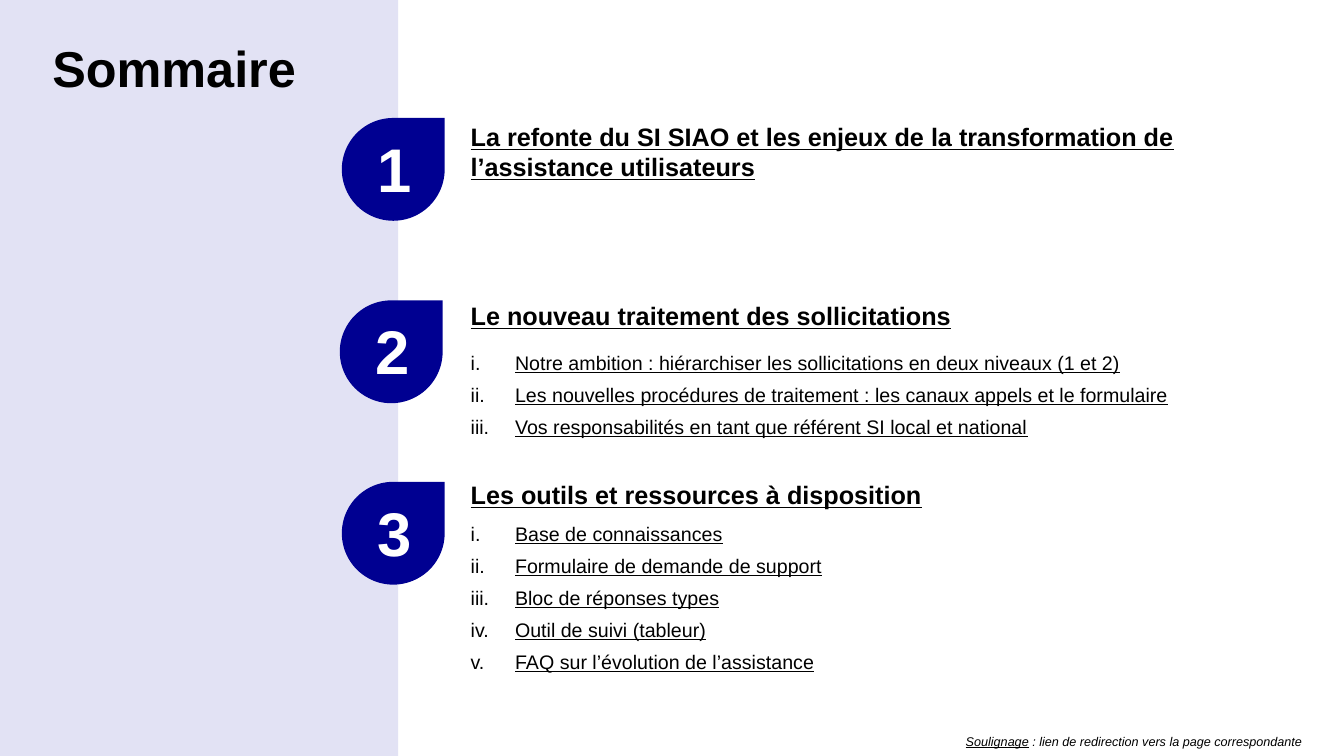
from pptx import Presentation, util as u
from pptx.dml.color import RGBColor
from pptx.enum import shapes, text
from lxml import etree

COLORS = {"band": "E2E2F4", "drop": "000091", "ink": "000000", "light": "FFFFFF"}
WIDE, HIGH = 13.33, 7.5
FONT = "Arial"
TITLE = "Sommaire"
NOTE = ("Soulignage", " : lien de redirection vers la page correspondante")

# heading, its top and height, left and top of its drop, top of its list, items
PARTS = [
    ("La refonte du SI SIAO et les enjeux de la transformation de l’assistance utilisateurs",
     1.15, 0.71, 3.39, 1.17, None, []),
    ("Le nouveau traitement des sollicitations", 2.93, 0.4, 3.37, 2.98, 3.43, [
        "Notre ambition : hiérarchiser les sollicitations en deux niveaux (1 et 2)",
        "Les nouvelles procédures de traitement : les canaux appels et le formulaire",
        "Vos responsabilités en tant que référent SI local et national"]),
    ("Les outils et ressources à disposition", 4.71, 0.4, 3.39, 4.78, 5.13, [
        "Base de connaissances",
        "Formulaire de demande de support",
        "Bloc de réponses types",
        "Outil de suivi (tableur)",
        "FAQ sur l’évolution de l’assistance"]),
]
TEXT_X, TEXT_W = 4.57, 8
DROP, INSET = 1.02, 0.26
INDENT = 0.44
ROW = 0.32

prs = Presentation()
prs.slide_width, prs.slide_height = u.Inches(WIDE), u.Inches(HIGH)
slide = prs.slides.add_slide(prs.slide_layouts[6])


def color(name):
    return RGBColor.from_string(COLORS[name])


def add_form(kind, x, y, w, h, fill):
    form = slide.shapes.add_shape(kind, *map(u.Inches, (x, y, w, h)))
    form.shadow.inherit = False
    form.fill.solid()
    form.fill.fore_color.rgb = color(fill)
    form.line.fill.background()
    return form


def add_box(x, y, w, h, wrap=True, anchor=text.MSO_ANCHOR.TOP):
    frame = slide.shapes.add_textbox(*map(u.Inches, (x, y, w, h))).text_frame
    frame.word_wrap = wrap
    frame.vertical_anchor = anchor
    return frame


def style(para, size, ink="ink", bold=False, under=False, italic=False):
    for run in para.runs:
        font = run.font
        font.name, font.size = FONT, u.Pt(size)
        font.bold, font.underline, font.italic = bold, under, italic
        font.color.rgb = color(ink)


def number(para):
    """Give the paragraph a hanging roman numeral."""
    props = para._p.get_or_add_pPr()
    props.set("marL", str(u.Inches(INDENT)))
    props.set("indent", str(-u.Inches(INDENT)))
    space = props.tag.split("}")[0] + "}"
    face = etree.SubElement(props, space + "buFont")
    face.set("typeface", FONT)
    mark = etree.SubElement(props, space + "buAutoNum")
    mark.set("type", "romanLcPeriod")
    para.space_after = u.Pt(6)


def add_list(y, items):
    frame = add_box(TEXT_X, y, TEXT_W, ROW * len(items))
    frame.text = "\n".join(items)
    for para in frame.paragraphs:
        number(para)
        style(para, 14, under=True)


def add_part(order, head, y, h, drop_x, drop_y, list_y, items):
    frame = add_box(TEXT_X, y, TEXT_W, h, anchor=text.MSO_ANCHOR.MIDDLE)
    frame.text = head
    style(frame.paragraphs[0], 18, bold=True, under=True)
    drop = add_form(shapes.MSO_SHAPE.TEAR, drop_x, drop_y, DROP, DROP, "drop")
    drop.adjustments[0] = 1
    digit = add_box(drop_x + INSET, drop_y + 0.08, 0.54, 0.85, wrap=False)
    digit.text = str(order)
    style(digit.paragraphs[0], 44, "light", bold=True)
    if items:
        add_list(list_y, items)


add_form(shapes.MSO_SHAPE.RECTANGLE, 0, 0, 3.95, HIGH, "band")
title = add_box(0.42, 0.39, 11.12, 1.05)
title.text = TITLE
title.paragraphs[0].line_spacing = 0.9
style(title.paragraphs[0], 36, bold=True)

for order, part in enumerate(PARTS, 1):
    add_part(order, *part)

note = add_box(9.48, 7.23, 3.86, 0.25, wrap=False).paragraphs[0]
for words in NOTE:
    note.add_run().text = words
style(note, 9, italic=True)
note.runs[0].font.underline = True

prs.save("out.pptx")
